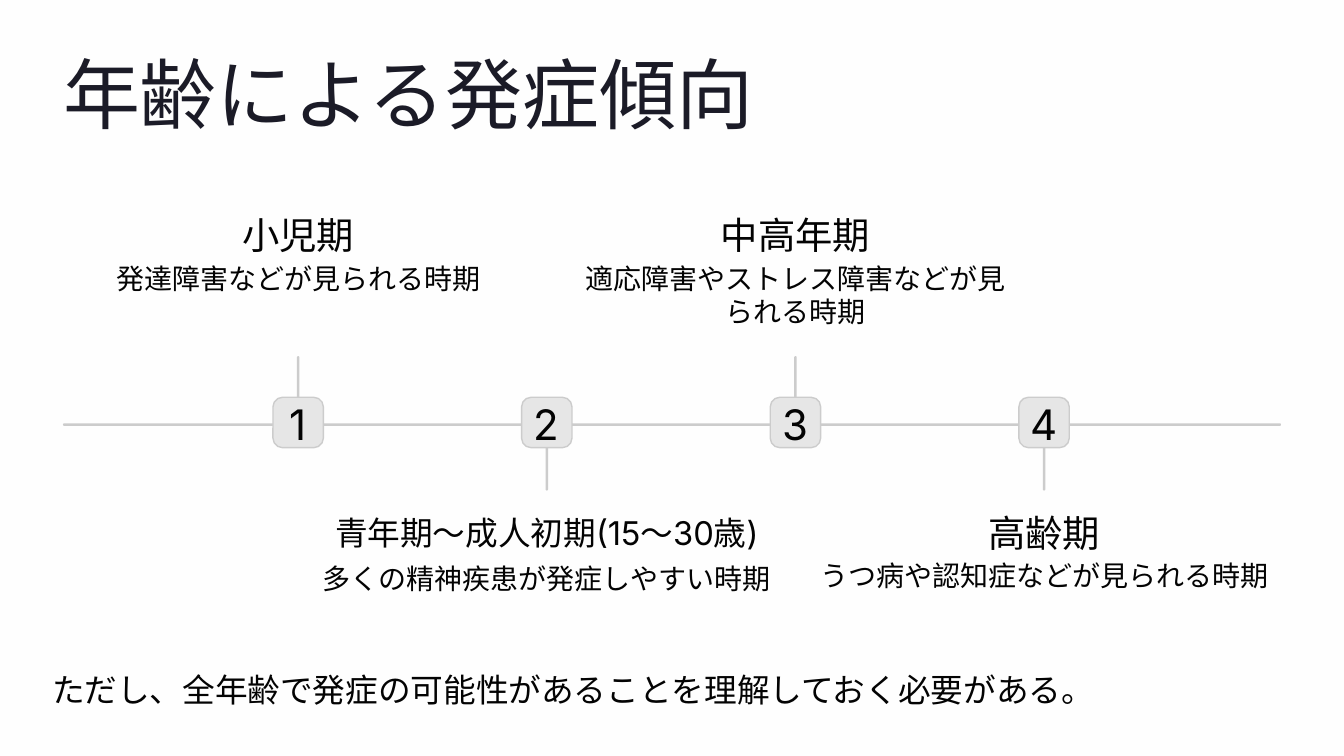
from dataclasses import dataclass

from pptx import Presentation
from pptx.dml.color import RGBColor
from pptx.enum.shapes import MSO_SHAPE
from pptx.enum.text import MSO_ANCHOR, MSO_AUTO_SIZE, PP_ALIGN
from pptx.util import Inches, Pt


@dataclass(frozen=True)
class Theme:
    """Colours, fonts and type sizes of the slide."""
    paper: str = "FEFEFE"
    title_ink: str = "1B1B27"
    ink: str = "030303"
    rule: str = "CCCCCC"
    badge: str = "E6E6E6"
    head_font: str = "Inter"
    body_font: str = "Karla"
    title_size: int = 66
    number_size: int = 36
    head_size: int = 32
    long_head_size: int = 28
    note_size: int = 24
    closing_size: int = 28


@dataclass(frozen=True)
class Stage:
    """One age group, with the distance of its heading from the axis."""
    head: str
    note: str
    offset: float
    head_size: int = Theme.head_size
    wrap: bool = False


THEME = Theme()
STAGES = [
    Stage("小児期", "発達障害などが見られる時期", -2.51),
    Stage("青年期〜成人初期(15〜30歳)", "多くの精神疾患が発症しやすい時期", 1.07,
          head_size=THEME.long_head_size),
    Stage("中高年期", "適応障害やストレス障害などが見られる時期", -2.51, wrap=True),
    Stage("高齢期", "うつ病や認知症などが見られる時期", 1.03),
]


def write(sp, text, font, size, color=THEME.ink, align=PP_ALIGN.CENTER,
          anchor=MSO_ANCHOR.TOP, wrap=False):
    """Put one formatted run into a shape without margins."""
    tf = sp.text_frame
    tf.margin_left = tf.margin_top = tf.margin_right = tf.margin_bottom = 0
    tf.auto_size = MSO_AUTO_SIZE.NONE
    tf.word_wrap = wrap
    tf.vertical_anchor = anchor
    p = tf.paragraphs[0]
    p.alignment = align
    r = p.add_run()
    r.text = text
    r.font.name = font
    r.font.size = Pt(size)
    r.font.color.rgb = RGBColor.from_string(color)
    return p


def add_text(s, box, text, font, size, **style):
    """Add a text box."""
    sp = s.shapes.add_textbox(*map(Inches, box))
    write(sp, text, font, size, **style)


def add_rounded(s, box, fill, radius, line=None):
    """Add a flat rounded rectangle."""
    sp = s.shapes.add_shape(MSO_SHAPE.ROUNDED_RECTANGLE, *map(Inches, box))
    sp.shadow.inherit = False
    sp.adjustments[0] = radius
    sp.fill.solid()
    sp.fill.fore_color.rgb = RGBColor.from_string(fill)
    if line:
        sp.line.color.rgb = RGBColor.from_string(line)
        sp.line.width = Pt(1.2)
    else:
        sp.line.fill.background()
    return sp


def add_title(s, box, text):
    """Place and format the title placeholder."""
    sp = s.shapes.title
    sp.left, sp.top, sp.width, sp.height = map(Inches, box)
    p = write(sp, text, THEME.head_font, THEME.title_size,
              color=THEME.title_ink, align=PP_ALIGN.LEFT, wrap=True)
    p.line_spacing = Pt(60)


def add_stage(s, cx, axis, number, stage):
    """Draw tick, numbered badge, heading and note around a point on the axis."""
    thick, tick, badge, head_w, note_w = 0.03, 0.8, 0.6, 4.36, 5.06
    tick_top = axis - tick if stage.offset < 0 else axis
    add_rounded(s, (cx - thick / 2, tick_top, thick, tick), THEME.rule, 0.5)
    sp = add_rounded(s, (cx - badge / 2, axis - 0.31, badge, badge),
                     THEME.badge, 0.19, THEME.rule)
    write(sp, str(number), THEME.head_font, THEME.number_size,
          anchor=MSO_ANCHOR.MIDDLE)
    sp.text_frame.margin_top = Inches(0.04)
    top = axis + stage.offset
    add_text(s, (cx - head_w / 2, top, head_w, 0.42), stage.head,
             THEME.head_font, stage.head_size)
    add_text(s, (cx - note_w / 2, top + 0.58, note_w, 0.86 if stage.wrap else 0.43),
             stage.note, THEME.body_font, THEME.note_size, wrap=stage.wrap)


def add_timeline(s, box, stages):
    """Draw the axis along the middle of the box and its evenly spaced stages."""
    left, top, width, height = box
    axis = top + height / 2
    first, step = 2.8, 2.96
    add_rounded(s, (left, axis, width, 0.03), THEME.rule, 0.5)
    for i, stage in enumerate(stages):
        add_stage(s, left + first + i * step, axis, i + 1, stage)


def main():
    """Build and save the slide."""
    prs = Presentation()
    prs.slide_width, prs.slide_height = Inches(16), Inches(9)
    s = prs.slides.add_slide(prs.slide_layouts[5])
    s.background.fill.solid()
    s.background.fill.fore_color.rgb = RGBColor.from_string(THEME.paper)
    add_title(s, (0.75, 0.82, 14.5, 0.84), "年齢による発症傾向")
    add_timeline(s, (0.75, 2.53, 14.5, 5.02), STAGES)
    add_text(s, (0.62, 7.97, 14.5, 0.43),
             "ただし、全年齢で発症の可能性があることを理解しておく必要がある。",
             THEME.body_font, THEME.closing_size, align=PP_ALIGN.LEFT)
    prs.save("out.pptx")


if __name__ == "__main__":
    main()
